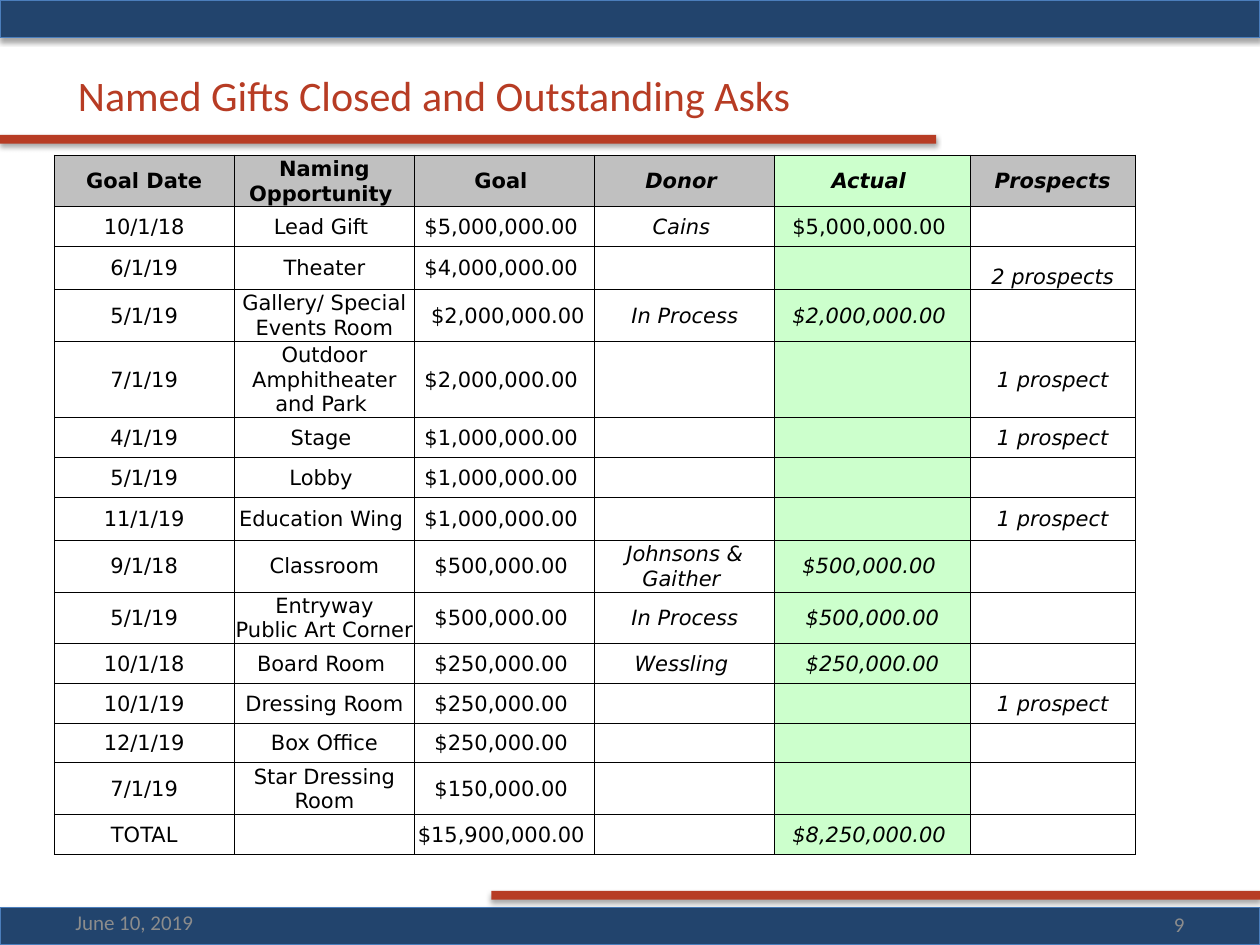
from lxml.etree import SubElement
from pptx import Presentation
from pptx.dml.color import RGBColor
from pptx.enum.shapes import MSO_SHAPE
from pptx.enum.text import MSO_ANCHOR, PP_ALIGN
from pptx.oxml.ns import qn
from pptx.util import Inches, Pt

W, H = Inches(10), Inches(7.5)
COLORS = {"navy": "22446D", "edge": "4B7EBC", "rust": "B73C24", "muted": "8C8C8C",
          "black": "000000", "white": "FFFFFF", "header": "C0C0C0", "actual": "CCFFCC"}
COLUMNS = [14.3, 14.3, 14.3, 14.3, 15.5, 13.1]
SHORT, MEDIUM, TWO_LINES, THREE_LINES = 4.2, 4.55, 5.4, 7.95
DONOR, ACTUAL = 3, 4
GIFTS = [
    (TWO_LINES, "Goal Date", "Naming Opportunity ", "Goal ", "Donor ", "Actual ", "Prospects"),
    (SHORT, "10/1/18", "Lead Gift ", "$5,000,000.00 ", "Cains ", "$5,000,000.00 ", ""),
    (MEDIUM, "6/1/19", "Theater", "$4,000,000.00 ", "", "", "2 prospects"),
    (TWO_LINES, "5/1/19", "Gallery/ Special Events Room", " $2,000,000.00", "In Process",
     "$2,000,000.00 ", ""),
    (THREE_LINES, "7/1/19", "Outdoor Amphitheater and Park ", "$2,000,000.00 ", "", "",
     "1 prospect"),
    (SHORT, "4/1/19", "Stage ", "$1,000,000.00 ", "", "", "1 prospect"),
    (SHORT, "5/1/19", "Lobby ", "$1,000,000.00 ", "", "", ""),
    (MEDIUM, "11/1/19", "Education Wing ", "$1,000,000.00 ", "", "", "1 prospect"),
    (TWO_LINES, "9/1/18", "Classroom", "$500,000.00 ", "Johnsons & Gaither ",
     "$500,000.00 ", ""),
    (TWO_LINES, "5/1/19", "Entryway\nPublic Art Corner", "$500,000.00 ", "In Process",
     "$500,000.00", ""),
    (SHORT, "10/1/18", "Board Room ", "$250,000.00 ", "Wessling ", "$250,000.00", ""),
    (SHORT, "10/1/19", "Dressing Room", "$250,000.00 ", "", "", "1 prospect"),
    (SHORT, "12/1/19", "Box Office", "$250,000.00 ", "", "", ""),
    (TWO_LINES, "7/1/19", "Star Dressing Room", "$150,000.00 ", "", "", ""),
    (SHORT, "TOTAL", "", "$15,900,000.00 ", "", "$8,250,000.00 ", ""),
]


def rgb(name):
    """Look up a named colour."""
    return RGBColor.from_string(COLORS[name])


def across(percent):
    """Turn a percentage of the slide width into a length."""
    return round(W * percent / 100)


def down(percent):
    """Turn a percentage of the slide height into a length."""
    return round(H * percent / 100)


def area(left, top, width, height):
    """Turn percentages of the slide into a position and size."""
    return across(left), down(top), across(width), down(height)


def put_text(tf, text, size=12, font="Calibri", color="black", align=PP_ALIGN.LEFT,
             bold=False, italic=False):
    """Write each line of the text as a formatted paragraph."""
    tf.word_wrap = True
    for i, line in enumerate(text.split("\n")):
        p = tf.add_paragraph() if i else tf.paragraphs[0]
        p.alignment = align
        r = p.add_run()
        r.text = line
        r.font.size, r.font.name = Pt(size), font
        r.font.bold, r.font.italic = bold, italic
        r.font.color.rgb = rgb(color)


def add_label(s, box, text, **style):
    """Add a vertically centred text box."""
    tf = s.shapes.add_textbox(*area(*box)).text_frame
    tf.vertical_anchor = MSO_ANCHOR.MIDDLE
    put_text(tf, text, **style)


def add_bar(s, box, fill, line=None):
    """Add a filled bar with a soft shadow below it."""
    sp = s.shapes.add_shape(MSO_SHAPE.RECTANGLE, *area(*box))
    sp.fill.solid()
    sp.fill.fore_color.rgb = rgb(fill)
    if line:
        sp.line.color.rgb = rgb(line)
        sp.line.width = Pt(0.75)
    else:
        sp.line.fill.background()
    sp.shadow.inherit = False
    effects = sp.element.spPr.find(qn("a:effectLst"))
    shadow = SubElement(effects, qn("a:outerShdw"), blurRad=str(Pt(3.1)), dist=str(Pt(1.8)),
                        dir="5400000", rotWithShape="0")
    color = SubElement(shadow, qn("a:srgbClr"), val=COLORS["black"])
    SubElement(color, qn("a:alpha"), val="35000")


def set_borders(cell):
    """Give the cell thin black lines on all sides."""
    tcPr = cell._tc.get_or_add_tcPr()
    for i, side in enumerate(("a:lnL", "a:lnR", "a:lnT", "a:lnB")):
        ln = tcPr.makeelement(qn(side), {"w": str(Pt(0.5))})
        fill = SubElement(ln, qn("a:solidFill"))
        SubElement(fill, qn("a:srgbClr"), val=COLORS["black"])
        tcPr.insert(i, ln)


def fill_cell(cell, text, fill, **style):
    """Fill, frame and label one table cell."""
    cell.fill.solid()
    cell.fill.fore_color.rgb = rgb(fill)
    set_borders(cell)
    cell.margin_left = cell.margin_right = cell.margin_top = Inches(0.01)
    cell.margin_bottom = 0
    cell.vertical_anchor = MSO_ANCHOR.MIDDLE
    put_text(cell.text_frame, text, font="DejaVu Sans", align=PP_ALIGN.CENTER, **style)


def add_gift_table(s):
    """Add the table of named gifts."""
    heights = [row[0] for row in GIFTS]
    box = area(4.3, 16.4, sum(COLUMNS), sum(heights))
    table = s.shapes.add_table(len(GIFTS), len(COLUMNS), *box).table
    table.first_row = table.horz_banding = False
    for column, width in zip(table.columns, COLUMNS):
        column.width = across(width)
    for i, (height, *texts) in enumerate(GIFTS):
        table.rows[i].height = down(height)
        for j, text in enumerate(texts):
            fill = "actual" if j == ACTUAL else "white" if i else "header"
            italic = j >= DONOR and (i, j) != (1, ACTUAL)
            fill_cell(table.cell(i, j), text, fill, bold=i == 0, italic=italic)
    table.cell(2, 5).vertical_anchor = MSO_ANCHOR.BOTTOM


def main():
    """Build the slide and save it."""
    prs = Presentation()
    prs.slide_width, prs.slide_height = W, H
    s = prs.slides.add_slide(prs.slide_layouts[6])
    for top in (0, 96):
        add_bar(s, (0, top, 100, 4), "navy", line="edge")
    add_bar(s, (0, 14.27, 74.3, 0.93), "rust")
    add_label(s, (5.2, 6, 94.8, 8.13), "Named Gifts Closed and Outstanding Asks",
              size=24, color="rust")
    add_bar(s, (39, 94.27, 61, 0.93), "rust")
    add_label(s, (71.7, 95.07, 23.3, 5.33), "9", color="muted", align=PP_ALIGN.RIGHT)
    add_label(s, (5, 94.93, 23.3, 5.33), "June 10, 2019", color="muted")
    add_gift_table(s)
    prs.save("out.pptx")


if __name__ == "__main__":
    main()
